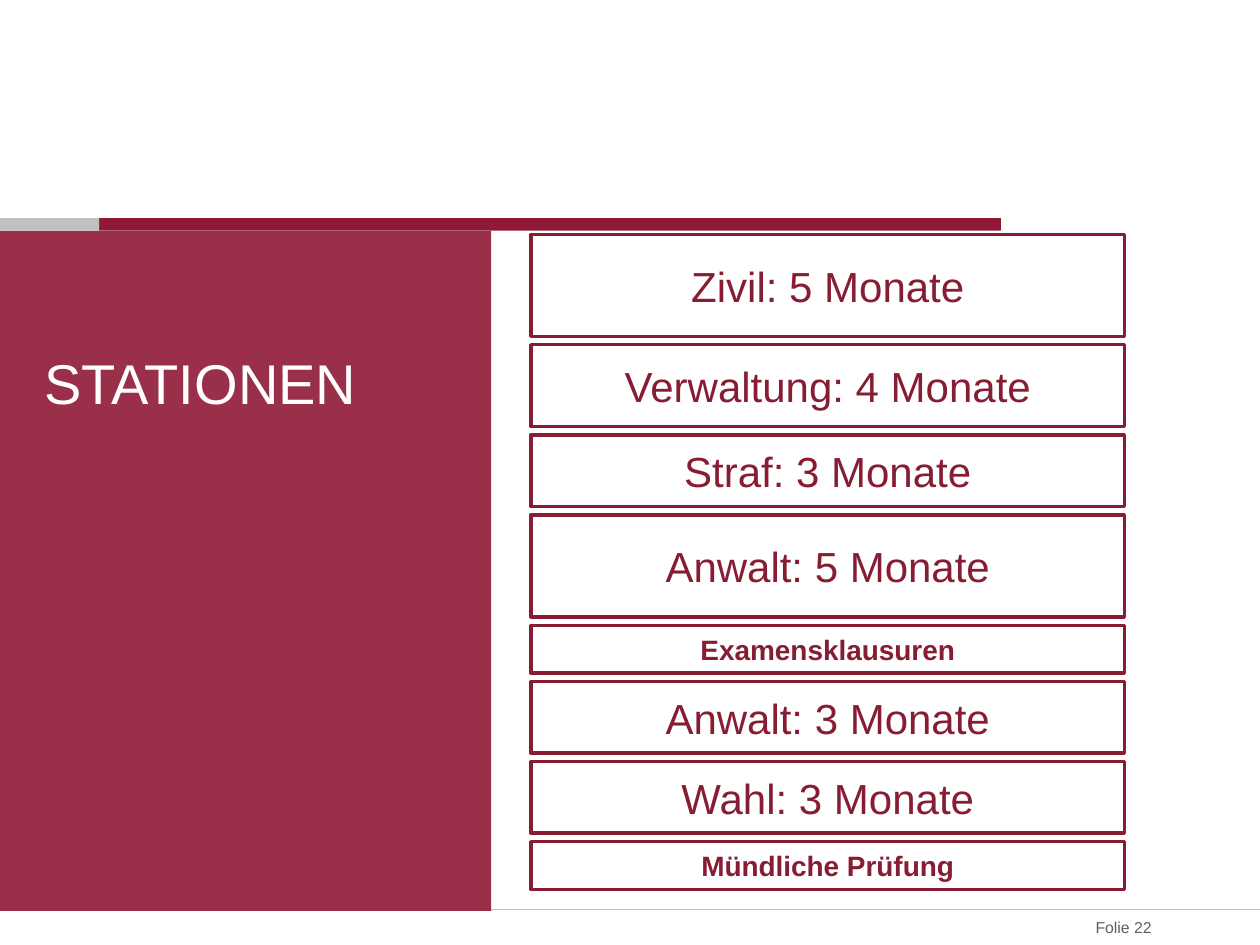
"""Build the slide on the stages of legal training."""
from dataclasses import dataclass

from lxml import etree
from pptx import Presentation
from pptx import util as u
from pptx.dml.color import RGBColor
from pptx.enum import shapes, text
from pptx.oxml.ns import qn

TITLE = "STATIONEN"
FOOTER = "Folie 22"
STAGES = [
    ("Zivil: 5 Monate", "long"),
    ("Verwaltung: 4 Monate", "medium"),
    ("Straf: 3 Monate", "short"),
    ("Anwalt: 5 Monate", "long"),
    ("Examensklausuren", "exam"),
    ("Anwalt: 3 Monate", "short"),
    ("Wahl: 3 Monate", "short"),
    ("Mündliche Prüfung", "exam"),
]
HEIGHTS = {"long": 58.3, "medium": 46.8, "short": 41, "exam": 27.4}
STACK_LEFT, STACK_TOP, STACK_WIDTH, STACK_GAP = 303.5, 133.9, 339, 4.75


@dataclass(frozen=True)
class Theme:
    """Colours, font and type sizes."""
    bar: str = "8F1936"
    stage: str = "871D33"
    grey: str = "C0C0C0"
    footer: str = "606060"
    white: str = "FFFFFF"
    font: str = "Arial"
    title_size: float = 32
    stage_size: float = 24
    exam_size: float = 16
    footer_size: float = 9


THEME = Theme()


def rgb(colour):
    """Turn a hex string into a colour."""
    return RGBColor.from_string(colour)


def add_block(page, frame, fill, line=None, alpha=None):
    """Add a flat rectangle, outlined or see-through on request."""
    box = page.shapes.add_shape(shapes.MSO_SHAPE.RECTANGLE, *map(u.Pt, frame))
    box.shadow.inherit = False
    box.fill.solid()
    box.fill.fore_color.rgb = rgb(fill)
    if line:
        box.line.color.rgb = rgb(line)
        box.line.width = u.Pt(2)
    else:
        box.line.fill.background()
    if alpha:
        colour = box._element.spPr.find(qn("a:solidFill"))[0]
        etree.SubElement(colour, qn("a:alpha")).set("val", str(alpha * 1000))
    return box


def write(box, words, size, colour, align, anchor, bold=False):
    """Put one styled paragraph into a box."""
    frame = box.text_frame
    frame.word_wrap = True
    frame.vertical_anchor = anchor
    para = frame.paragraphs[0]
    para.text = words
    para.alignment = align
    para.font.name = THEME.font
    para.font.size = u.Pt(size)
    para.font.bold = bold
    para.font.color.rgb = rgb(colour)


def add_label(page, frame, *style, right=0):
    """Add a text box without insets, save an optional right one."""
    box = page.shapes.add_textbox(*map(u.Pt, frame))
    write(box, *style)
    inner = box.text_frame
    inner.margin_left = inner.margin_top = inner.margin_bottom = 0
    inner.margin_right = u.Pt(right)


def add_rule(page, y, width):
    """Draw the thin line above the footer."""
    rule = page.shapes.add_connector(
        shapes.MSO_CONNECTOR.STRAIGHT, 0, u.Pt(y), u.Pt(width), u.Pt(y))
    rule.line.color.rgb = rgb(THEME.grey)
    rule.line.width = u.Pt(0.75)
    etree.SubElement(rule._element.spPr, qn("a:effectLst"))


def add_stages(page):
    """Stack the stages with equal gaps."""
    top = STACK_TOP
    for words, kind in STAGES:
        height = HEIGHTS[kind]
        exam = kind == "exam"
        box = add_block(page, (STACK_LEFT, top, STACK_WIDTH, height),
                        THEME.white, line=THEME.stage)
        write(box, words, THEME.exam_size if exam else THEME.stage_size,
              THEME.stage, text.PP_ALIGN.CENTER, text.MSO_ANCHOR.MIDDLE, exam)
        top += height + STACK_GAP


def main():
    """Compose and save the deck."""
    deck = Presentation()
    deck.slide_width, deck.slide_height = u.Pt(720), u.Pt(540)
    page = deck.slides.add_slide(deck.slide_layouts[6])
    add_block(page, (56.5, 124.7, 515.5, 7.2), THEME.bar)
    add_block(page, (0, 124.7, 56.6, 7.2), THEME.grey)
    add_rule(page, 519.7, 720)
    add_label(page, (571.7, 519.8, 91.4, 20.2), FOOTER, THEME.footer_size,
              THEME.footer, text.PP_ALIGN.RIGHT, text.MSO_ANCHOR.MIDDLE, right=5)
    add_block(page, (0, 131.9, 280.6, 388.6), THEME.bar, alpha=90)
    add_label(page, (25.2, 198.9, 232.6, 172), TITLE, THEME.title_size,
              THEME.white, text.PP_ALIGN.LEFT, text.MSO_ANCHOR.TOP)
    add_stages(page)
    deck.save("out.pptx")


if __name__ == "__main__":
    main()
